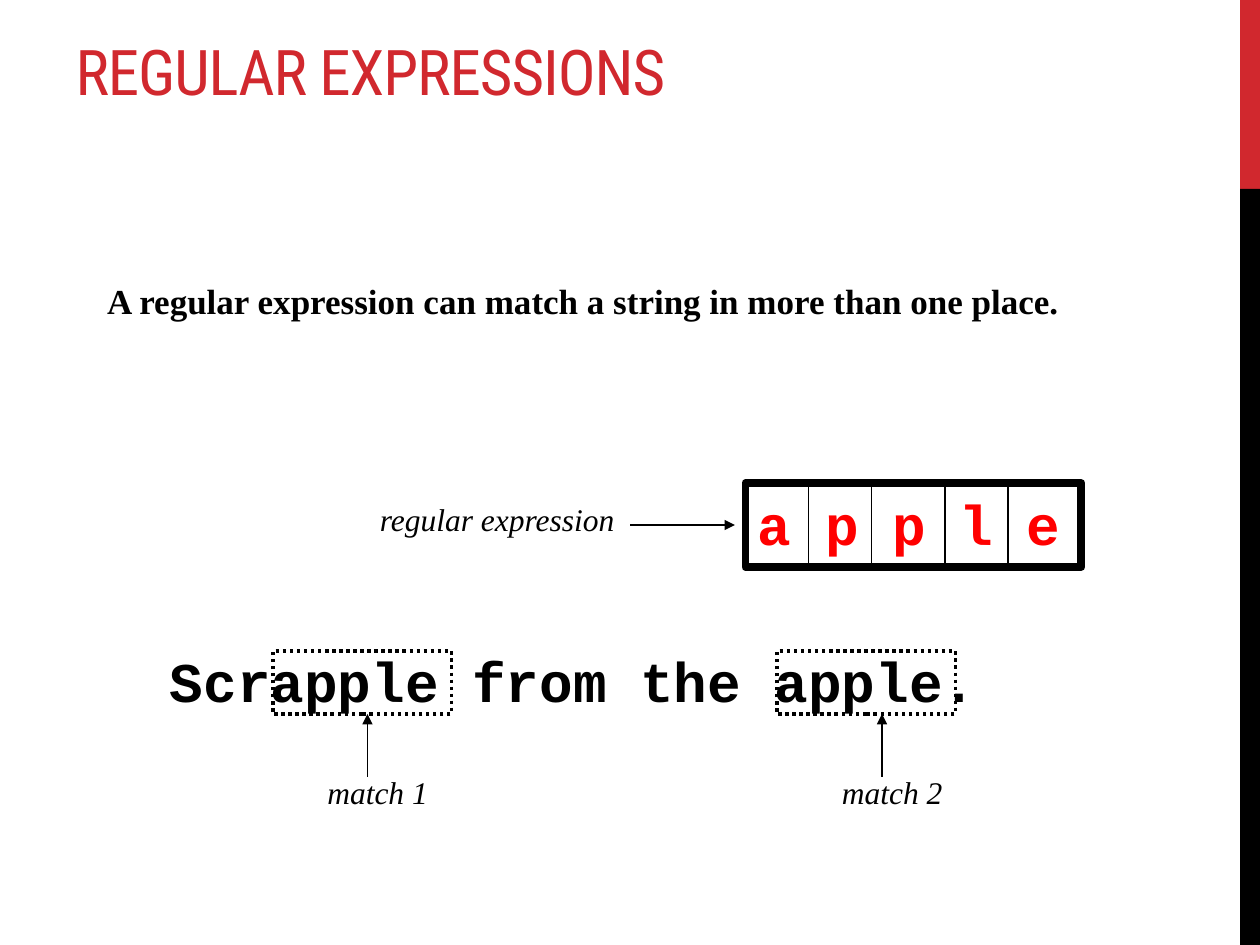
from pptx import Presentation
from pptx.dml.color import RGBColor
from pptx.enum.dml import MSO_LINE
from pptx.enum.shapes import MSO_CONNECTOR, MSO_SHAPE
from pptx.enum.text import MSO_ANCHOR, MSO_AUTO_SIZE, PP_ALIGN
from pptx.oxml.xmlchemy import OxmlElement
from pptx.util import Emu, Pt

EMU_PER_PX = 7620  # 120 px to the inch

COLORS = {"accent": "D1282E", "ink": "000000", "pattern": "FF0000"}

FORMATS = {
    "title": {"name": "Roboto Condensed", "size": Pt(36), "bold": False, "color": "accent"},
    "statement": {"name": "Times New Roman", "size": Pt(20), "bold": True, "color": "ink"},
    "label": {"name": "Times New Roman", "size": Pt(18), "italic": True, "color": "ink"},
    "subject": {"name": "Courier New", "size": Pt(32), "bold": True, "color": "ink"},
    "pattern": {"name": "Courier New", "size": Pt(32), "bold": True, "color": "pattern"},
}


def px(value):
    return Emu(value * EMU_PER_PX)


def rgb(color):
    return RGBColor.from_string(COLORS[color])


def add_child(parent, tag, **attributes):
    child = OxmlElement(tag)
    for key, value in attributes.items():
        child.set(key, str(value))
    parent.append(child)
    return child


class SlideBuilder:
    """Holds the current slide and draws each kind of element on it."""

    def __init__(self, slide):
        self.slide = slide
        self.shapes = slide.shapes

    def fill_text(self, frame, text, style, before=0):
        """Fill the frame with one paragraph; before is a percentage of a line."""
        paragraph = frame.paragraphs[0]
        paragraph.alignment = PP_ALIGN.LEFT
        if before:
            spacing = add_child(paragraph._p.get_or_add_pPr(), "a:spcBef")
            add_child(spacing, "a:spcPct", val=before * 1000)
        run = paragraph.add_run()
        run.text = text
        for key, value in FORMATS[style].items():
            if key == "color":
                run.font.color.rgb = rgb(value)
            else:
                setattr(run.font, key, value)
        return paragraph, run

    def place(self, placeholder, left, top, width, height, anchor):
        placement = {"left": left, "top": top, "width": width, "height": height}
        for key, value in placement.items():
            setattr(placeholder, key, px(value))
        frame = placeholder.text_frame
        frame.auto_size = MSO_AUTO_SIZE.NONE
        frame.vertical_anchor = anchor
        return frame

    def title(self, text, *box):
        frame = self.place(self.shapes.title, *box, MSO_ANCHOR.BOTTOM)
        _, run = self.fill_text(frame, text, "title")
        run.font._element.set("spc", "-60")

    def statement(self, text, *box):
        frame = self.place(self.slide.placeholders[1], *box, MSO_ANCHOR.TOP)
        paragraph, _ = self.fill_text(frame, text, "statement", before=20)
        paragraph.space_after = Pt(6)
        properties = paragraph._p.get_or_add_pPr()
        for key in ("marL", "indent"):
            properties.set(key, "0")
        add_child(properties, "a:buNone")

    def text(self, text, style, left, top, width, height, wrap=True):
        frame = self.shapes.add_textbox(*map(px, (left, top, width, height))).text_frame
        frame.word_wrap = wrap
        frame.auto_size = MSO_AUTO_SIZE.SHAPE_TO_FIT_TEXT
        self.fill_text(frame, text, style, before=50)

    def rectangle(self, *box):
        rectangle = self.shapes.add_shape(MSO_SHAPE.RECTANGLE, *map(px, box))
        rectangle.shadow.inherit = False
        return rectangle

    def bar(self, color, *box):
        bar = self.rectangle(*box)
        bar.fill.solid()
        bar.fill.fore_color.rgb = rgb(color)
        bar.line.fill.background()

    def frame(self, weight, *box, dash=None):
        frame = self.rectangle(*box)
        frame.fill.background()
        frame.line.color.rgb = rgb("ink")
        frame.line.width = Pt(weight)
        if dash:
            frame.line.dash_style = dash

    def line(self, *ends, arrow=False):
        line = self.shapes.add_connector(MSO_CONNECTOR.STRAIGHT, *map(px, ends))
        line.line.color.rgb = rgb("ink")
        line.line.width = Pt(0.75)
        if arrow:
            add_child(line.line._get_or_add_ln(), "a:tailEnd", type="triangle")
        add_child(line._element.spPr, "a:effectLst")


def main():
    presentation = Presentation()
    presentation.slide_width, presentation.slide_height = px(1200), px(900)
    slide = SlideBuilder(presentation.slides.add_slide(presentation.slide_layouts[1]))

    slide.bar("accent", 1181, 0, 19, 180)
    slide.bar("ink", 1181, 180, 19, 720)
    slide.title("REGULAR EXPRESSIONS", 60, 4, 1121, 105)
    slide.statement("A regular expression can match a string in more than one place.",
                    90, 260, 1020, 140)

    slide.text("Scrapple from the apple.", "subject", 150, 610, 810, 75)
    matches = [("match 1", 260, 350), ("match 2", 740, 840)]
    for label, match_left, arrow_x in matches:
        slide.frame(2, match_left, 620, 170, 60, dash=MSO_LINE.ROUND_DOT)
        slide.text(label, "label", arrow_x - 50, 730, 120, 48, wrap=False)
        slide.line(arrow_x, 740, arrow_x, 680, arrow=True)

    slide.text("regular expression", "label", 350, 470, 250, 48, wrap=False)
    slide.line(600, 500, 700, 500, arrow=True)
    slide.frame(4.5, 710, 460, 320, 80)
    slide.text("a p p l e", "pattern", 710, 460, 320, 75)
    for divider_x in (770, 830, 900, 960):
        slide.line(divider_x, 460, divider_x, 540)

    presentation.save("out.pptx")


if __name__ == "__main__":
    main()
